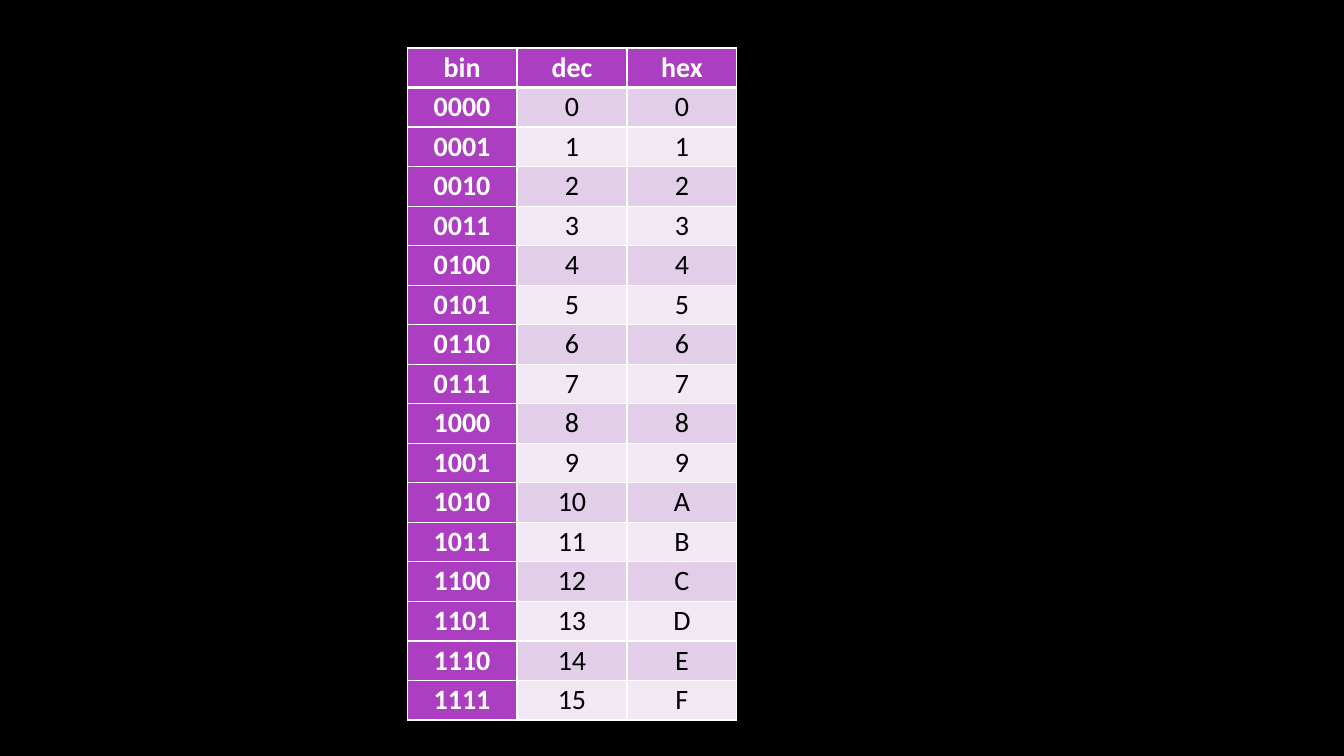
from lxml import etree
from pptx import Presentation
from pptx.dml.color import RGBColor
from pptx.enum.text import PP_ALIGN
from pptx.oxml.ns import qn
from pptx.util import Cm, Pt

CENTER = PP_ALIGN.CENTER
BLACK, WHITE, PURPLE = "000000", "FFFFFF", "AC3EC1"
BANDS = ("E3CEE9", "F1E8F4")
HEADINGS = ("bin", "dec", "hex")
TABLE_LEFT, TABLE_TOP = Cm(10.26), Cm(1.21)
TABLE_WIDTH, TABLE_HEIGHT = Cm(8.31), Cm(16.94)


def color(value):
    """Turn a hex string into a colour."""
    return RGBColor.from_string(value)


def paint(fill, value):
    """Give a fill one solid colour."""
    fill.solid()
    fill.fore_color.rgb = color(value)


def set_borders(cell, top, bottom):
    """Draw white borders around a cell, with its top and bottom widths in points."""
    properties = cell._tc.get_or_add_tcPr()
    sides = (("a:lnL", 1), ("a:lnR", 1), ("a:lnT", top), ("a:lnB", bottom))
    for index, (tag, width) in enumerate(sides):
        line = etree.Element(qn(tag), w=str(Pt(width)))
        fill = etree.SubElement(line, qn("a:solidFill"))
        etree.SubElement(fill, qn("a:srgbClr"), val=WHITE)
        properties.insert(index, line)


def fill_cell(cell, text, background, is_heading):
    """Write centred text on a coloured cell."""
    paint(cell.fill, background)
    cell.margin_left = cell.margin_right = Cm(0.08)
    cell.margin_top = cell.margin_bottom = 0
    para = cell.text_frame.paragraphs[0]
    para.alignment = CENTER
    para.line_spacing = 1.07
    span = para.add_run()
    span.text = text
    span.font.name = "Calibri"
    span.font.size = Pt(20)
    span.font.bold = is_heading
    span.font.color.rgb = color(WHITE if is_heading else BLACK)


def add_number_table(page, rows):
    """Add a table with a heading row, a heading column and banded rows."""
    frame = page.shapes.add_table(len(rows), len(HEADINGS), TABLE_LEFT, TABLE_TOP,
                                  TABLE_WIDTH, TABLE_HEIGHT)
    table = frame.table
    table.first_col = True
    for row_index, texts in enumerate(rows):
        for column_index, text in enumerate(texts):
            cell = table.cell(row_index, column_index)
            is_heading = row_index == 0 or column_index == 0
            background = PURPLE if is_heading else BANDS[(row_index - 1) % 2]
            fill_cell(cell, text, background, is_heading)
            set_borders(cell, 3 if row_index == 1 else 1, 3 if row_index == 0 else 1)


def main():
    """Build the slide of binary, decimal and hexadecimal numbers."""
    deck = Presentation()
    deck.slide_width, deck.slide_height = Cm(33.87), Cm(19.05)
    page = deck.slides.add_slide(deck.slide_layouts[6])
    paint(page.background.fill, BLACK)
    numbers = [(f"{number:04b}", str(number), f"{number:X}") for number in range(16)]
    add_number_table(page, [HEADINGS, *numbers])
    deck.save("out.pptx")


if __name__ == "__main__":
    main()
